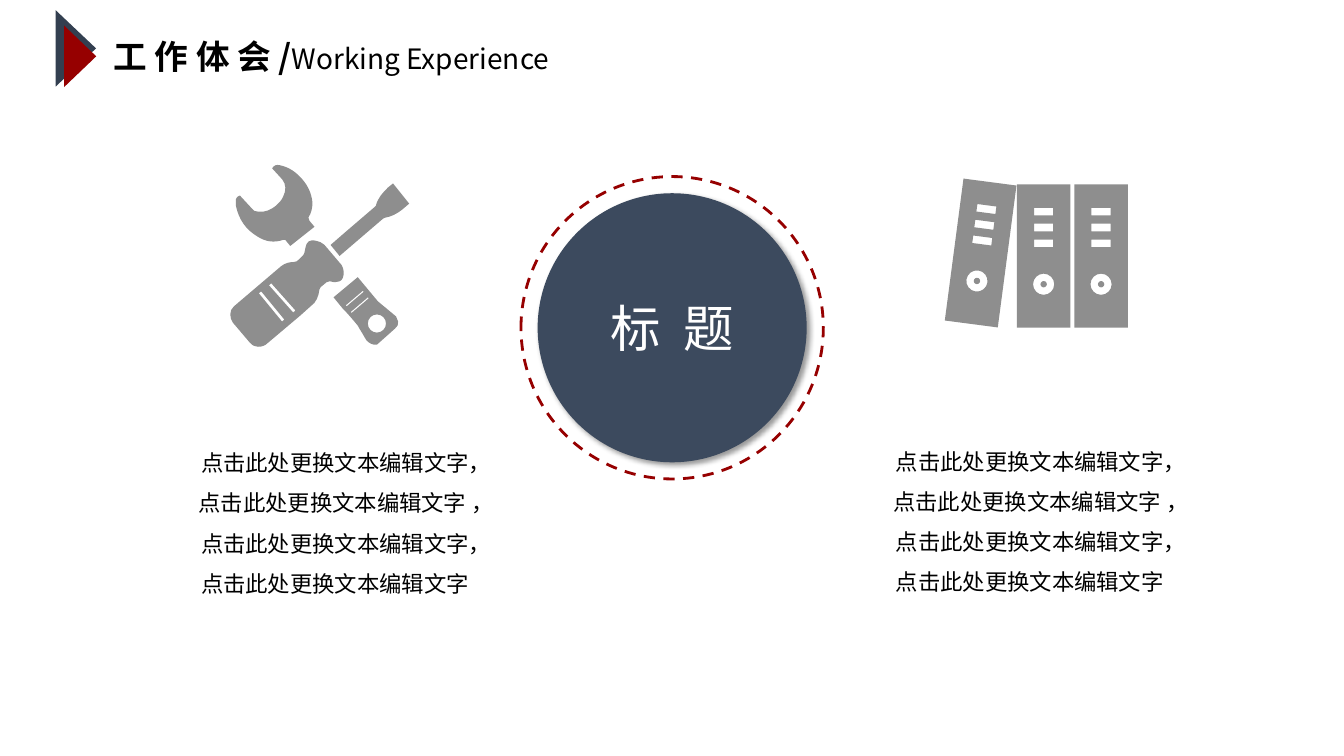
from dataclasses import dataclass
from math import cos, hypot, radians, sin

from lxml.etree import SubElement
from pptx import Presentation
from pptx.dml.color import RGBColor
from pptx.enum.dml import MSO_LINE
from pptx.enum.shapes import MSO_SHAPE
from pptx.enum.text import MSO_ANCHOR, MSO_AUTO_SIZE, PP_ALIGN
from pptx.oxml.ns import qn
from pptx.util import Cm, Pt


@dataclass(frozen=True)
class Theme:
    font: str = "Noto Sans CJK SC"
    text: str = "000000"
    white: str = "FFFFFF"
    navy: str = "333F50"
    slate: str = "3C4A5E"
    red: str = "960000"
    grey: str = "8E8E8E"
    title: int = 24
    subtitle: int = 20
    hub: int = 36
    body: int = 16


THEME = Theme()
BODY = ("点击此处更换文本编辑文字，点击此处更换文本编辑文字 ，"
        "点击此处更换文本编辑文字，点击此处更换文本编辑文字")

# Icon outlines in hundredths of an inch: a pair is a straight line,
# six numbers are a Bezier curve (two control points and the end)
UNIT_CM = 2.54 / 100
FINE = 100  # local path units per icon unit
HANDLE = [
    (256, 344), (253, 344, 251, 343, 248, 340), (231, 320),
    (228, 316, 227, 308, 232, 304), (279, 264), (283, 261, 287, 260, 291, 260),
    (294, 260, 295, 259, 297, 257), (301, 253), (302, 251), (303, 246),
    (304, 240, 307, 237, 314, 239), (317, 239, 319, 241, 322, 243), (339, 263),
    (341, 267, 342, 271, 340, 276), (339, 279, 335, 280, 332, 280),
    (330, 280, 329, 279, 327, 279), (324, 280), (318, 285), (317, 287),
    (316, 294, 314, 300, 308, 304), (298, 313), (266, 340),
    (263, 343, 260, 344, 256, 344)]
WRENCH_HEAD = [
    (238, 194), (250, 207), (251, 209, 253, 210, 256, 210),
    (263, 211, 269, 208, 274, 204), (277, 201, 280, 198, 281, 195),
    (284, 189, 284, 183, 280, 178), (270, 167), (272, 164, 274, 163, 278, 164),
    (287, 166, 294, 171, 300, 178), (306, 185, 309, 192, 310, 201),
    (310, 206, 309, 211, 306, 216), (307, 219), (312, 225), (288, 244),
    (283, 238), (281, 238), (272, 241, 264, 240, 256, 235),
    (244, 228, 237, 218, 234, 204), (234, 198),
    (234, 197, 235, 196, 236, 195), (238, 194)]
WRENCH_TAIL = [
    (355, 275), (375, 299), (393, 314), (395, 319),
    (396, 322, 394, 324, 392, 326), (374, 342), (371, 342),
    (367, 341, 364, 339, 362, 335), (360, 331, 357, 327, 355, 323),
    (350, 317, 345, 311, 340, 306), (331, 295), (355, 275)]
BLADE = [
    (328, 243), (343, 230), (371, 206), (373, 204),
    (375, 196, 380, 191, 385, 186), (390, 182), (406, 202), (399, 208),
    (394, 212, 388, 215, 382, 216), (380, 217), (338, 253), (337, 254),
    (328, 243)]


def rgb(value):
    return RGBColor.from_string(value)


def style_run(r, size, color, bold=False):
    r.font.name, r.font.size, r.font.bold = THEME.font, Pt(size), bold
    r.font.color.rgb = rgb(color)
    SubElement(r.font._element, qn("a:ea"), typeface=THEME.font)


def paint(sp, fill, rotation=0):
    sp.shadow.inherit = False
    sp.line.fill.background()
    sp.fill.solid()
    sp.fill.fore_color.rgb = rgb(fill)
    sp.rotation = rotation
    return sp


def add_block(shapes, kind, x, y, w, h, fill, rotation=0):
    """Plain preset shape centred on x, y (cm)."""
    sp = shapes.add_shape(kind, Cm(x - w / 2), Cm(y - h / 2), Cm(w), Cm(h))
    return paint(sp, fill, rotation)


# Contours for the icons
def box(x, y, w, h):
    x1, x2, y1, y2 = x - w / 2, x + w / 2, y - h / 2, y + h / 2
    return [(x1, y1), (x2, y1), (x2, y2), (x1, y2)]


def circle(x, y, radius):
    k = 0.55 * radius
    contour, (dx, dy) = [(x + radius, y)], (1, 0)
    for _ in range(4):
        nx, ny = -dy, dx
        contour.append((x + dx * radius + nx * k, y + dy * radius + ny * k,
                        x + nx * radius + dx * k, y + ny * radius + dy * k,
                        x + nx * radius, y + ny * radius))
        dx, dy = nx, ny
    return contour


def groove(x1, y1, x2, y2, width):
    scale = width / 2 / hypot(x2 - x1, y2 - y1)
    nx, ny = (y1 - y2) * scale, (x2 - x1) * scale
    return [(x1 + nx, y1 + ny), (x2 + nx, y2 + ny),
            (x2 - nx, y2 - ny), (x1 - nx, y1 - ny)]


def add_outline(shapes, *contours, rotation=0):
    """Grey shape from an outer contour and its holes."""
    fb = None
    for contour in contours:
        ends = [(seg[-2] * FINE, seg[-1] * FINE) for seg in contour]
        if fb is None:
            fb = shapes.build_freeform(*ends[0], scale=Cm(UNIT_CM) / FINE)
        else:
            fb.move_to(*ends[0])
        fb.add_line_segments(ends[1:], close=True)
    sp = paint(fb.convert_to_shape(), THEME.grey, rotation)
    # Bend the segments that carry control points
    left = min(seg[-2] for c in contours for seg in c)
    top = min(seg[-1] for c in contours for seg in c)
    segments = [seg for c in contours for seg in c[1:]]
    lines = list(sp._element.iter(qn("a:lnTo")))
    for line, seg in zip(lines, segments):
        if len(seg) == 6:
            line.tag = qn("a:cubicBezTo")
            line.remove(line[0])
            for x, y in (seg[:2], seg[2:4], seg[4:]):
                SubElement(line, qn("a:pt"), x=str(round((x - left) * FINE)),
                           y=str(round((y - top) * FINE)))


def add_tools(slide):
    shapes = slide.shapes.add_group_shape().shapes
    add_outline(shapes, HANDLE, groove(268, 282, 292, 309, 3),
                groove(258, 290, 281, 318, 3))
    add_outline(shapes, WRENCH_HEAD)
    add_outline(shapes, WRENCH_TAIL, circle(374, 321, 9),
                groove(343.5, 303.5, 360.5, 289, 1.3),
                groove(348.5, 310, 365.5, 295.5, 1.3))
    add_outline(shapes, BLADE)


def add_binder(shapes, x, y, angle=0):
    slots = [box(x, y - 44 + 15.75 * i, 19, 7.5) for i in range(3)]
    ring = 28  # distance of the ring below the centre
    add_outline(shapes, box(x, y, 53, 142), *slots,
                circle(x, y + ring, 10.5), rotation=angle)
    a = radians(angle)
    add_block(shapes, MSO_SHAPE.OVAL, (x - ring * sin(a)) * UNIT_CM,
              (y + ring * cos(a)) * UNIT_CM, 0.16, 0.16, THEME.grey)


def add_binders(slide):
    shapes = slide.shapes.add_group_shape().shapes
    for x, y, angle in ((973, 251, 7.5), (1035.5, 254, 0), (1092.5, 254, 0)):
        add_binder(shapes, x, y, angle)


def add_title(slide):
    for x, y, w, h, fill in ((1.91, 1.22, 1.93, 1.02, THEME.navy),
                             (2.02, 1.42, 1.55, 0.81, THEME.red)):
        add_block(slide.shapes, MSO_SHAPE.ISOSCELES_TRIANGLE, x, y, w, h, fill, 90)
    sp = slide.shapes.title
    sp.left, sp.top, sp.width, sp.height = Cm(2.61), Cm(0.78), Cm(15.77), Cm(1.27)
    tf = sp.text_frame
    tf.vertical_anchor, tf.auto_size = MSO_ANCHOR.TOP, MSO_AUTO_SIZE.NONE
    p = tf.paragraphs[0]
    p.alignment = PP_ALIGN.LEFT
    for text, size, bold in (("工 作 体 会 /", THEME.title, True),
                             ("Working Experience", THEME.subtitle, False)):
        r = p.add_run()
        r.text = text
        style_run(r, size, THEME.text, bold)


def add_hub(slide):
    x, y = 16.94, 8.26
    ring = add_block(slide.shapes, MSO_SHAPE.OVAL, x, y, 7.62, 7.62, THEME.white)
    ring.fill.background()
    ring.line.color.rgb = rgb(THEME.red)
    ring.line.width = Pt(2)
    ring.line.dash_style = MSO_LINE.DASH
    disc = add_block(slide.shapes, MSO_SHAPE.OVAL, x, y, 6.78, 6.78, THEME.slate)
    # Soft shadow to the lower right
    shadow = SubElement(disc._element.spPr.find(qn("a:effectLst")), qn("a:outerShdw"),
                        blurRad=str(Pt(4)), dist=str(Pt(3)), dir=str(45 * 60000))
    color = SubElement(shadow, qn("a:srgbClr"), val=THEME.text)
    SubElement(color, qn("a:alpha"), val="40000")
    disc.text_frame.text = "标 题"
    disc.text_frame.vertical_anchor = MSO_ANCHOR.MIDDLE
    p = disc.text_frame.paragraphs[0]
    p.alignment = PP_ALIGN.CENTER
    style_run(p.runs[0], THEME.hub, THEME.white)
    p.runs[0].font._element.set("spc", "400")


def add_body(slide, x, y):
    tf = slide.shapes.add_textbox(Cm(x), Cm(y), Cm(7.39), Cm(5.38)).text_frame
    tf.word_wrap = True
    tf.text = BODY
    p = tf.paragraphs[0]
    p.alignment, p.line_spacing = PP_ALIGN.CENTER, 1.5
    style_run(p.runs[0], THEME.body, THEME.text)


def main():
    prs = Presentation()
    prs.slide_width, prs.slide_height = Cm(33.87), Cm(19.05)
    slide = prs.slides.add_slide(prs.slide_layouts[5])
    add_title(slide)
    add_hub(slide)
    add_tools(slide)
    add_binders(slide)
    add_body(slide, 22.26, 10.82)
    add_body(slide, 4.75, 10.86)
    prs.save("out.pptx")


if __name__ == "__main__":
    main()
